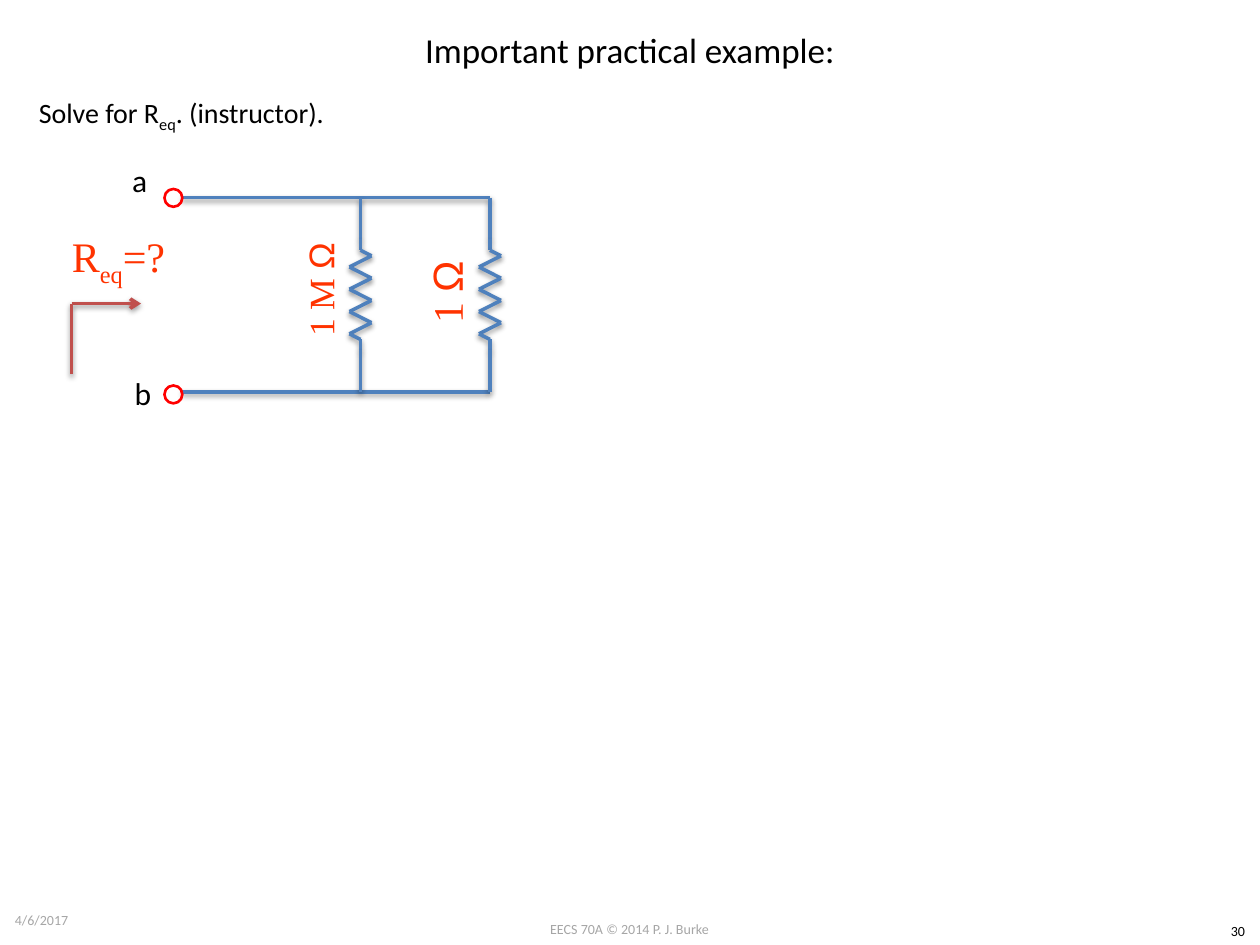
from itertools import pairwise

from lxml import etree
from pptx import Presentation
from pptx.dml.color import RGBColor
from pptx.enum import shapes, text
from pptx.oxml import ns
from pptx.util import Pt

BLACK = RGBColor(0x00, 0x00, 0x00)
GRAY = RGBColor(0xA6, 0xA6, 0xA6)
BLUE = RGBColor(0x4F, 0x81, 0xBD)
BRICK = RGBColor(0xC0, 0x50, 0x4D)
RED = RGBColor(0xFF, 0x00, 0x00)
ORANGE = RGBColor(0xFF, 0x33, 0x00)

SANS, SERIF, SYMBOL = "Calibri", "Times New Roman", "Arial"
LEFT, CENTER = text.PP_ALIGN.LEFT, text.PP_ALIGN.CENTER
TOP, MIDDLE = text.MSO_ANCHOR.TOP, text.MSO_ANCHOR.MIDDLE

TOP_WIRE, BOTTOM_WIRE = 113, 224
TERMINAL_X, RESISTOR_XS = 103.7, (206, 280)


def add_run(p, words, size, color, font=SANS, subscript=False):
    r = p.add_run()
    r.text = words
    r.font.size = Pt(size)
    r.font.name = font
    r.font.color.rgb = color
    if subscript:
        r.font._element.set("baseline", "-25000")


def add_label(slide, box, runs, align=LEFT, anchor=TOP, rotation=0, wrap=True):
    sp = slide.shapes.add_textbox(*map(Pt, box))
    sp.rotation = rotation
    tf = sp.text_frame
    tf.word_wrap = wrap
    tf.vertical_anchor = anchor
    p = tf.paragraphs[0]
    p.alignment = align
    for run in runs:
        add_run(p, *run)


def add_shadow(line):
    effects = etree.SubElement(line._element.spPr, ns.qn("a:effectLst"))
    shadow = etree.SubElement(
        effects, ns.qn("a:outerShdw"), blurRad=str(Pt(3.1)),
        dist=str(Pt(1.6)), dir="5400000", rotWithShape="0")
    color = etree.SubElement(shadow, ns.qn("a:srgbClr"), val=str(BLACK))
    etree.SubElement(color, ns.qn("a:alpha"), val="38000")


def add_line(parent, start, end, color=BLUE, arrow=False):
    line = parent.shapes.add_connector(
        shapes.MSO_CONNECTOR.STRAIGHT, *map(Pt, (*start, *end)))
    line.line.color.rgb = color
    line.line.width = Pt(2)
    if arrow:
        etree.SubElement(line.line._get_or_add_ln(), ns.qn("a:tailEnd"), type="arrow")
    add_shadow(line)


def add_resistor(slide, x):
    first, step, swing, teeth = 146.2, 6.37, 6.3, 8
    zigzag = [(x + swing * (-1) ** i, first + step * i) for i in range(teeth)]
    last = first + step * (teeth - 1)
    head = [(x, y) for y in (TOP_WIRE, 136.8, first - step / 2)]
    foot = [(x, y) for y in (last + step / 2, 200.2, BOTTOM_WIRE)]
    group = slide.shapes.add_group_shape()
    for start, end in pairwise(head + zigzag + foot):
        add_line(group, start, end)


def add_terminal(slide, y):
    sp = slide.shapes.add_shape(
        shapes.MSO_SHAPE.OVAL, *map(Pt, (94, y, 10.2, 10.2)))
    sp.shadow.inherit = False
    sp.fill.background()
    sp.line.color.rgb = RED
    sp.line.width = Pt(1.5)


def add_probe_arrow(slide):
    corner = (41, 173.5)
    group = slide.shapes.add_group_shape()
    add_line(group, corner, (80.6, 173.5), BRICK, arrow=True)
    add_line(group, (41, 213.8), corner, BRICK)


def add_title(slide, words):
    sp = slide.shapes.title
    sp.left, sp.top, sp.width, sp.height = map(Pt, (36, 0, 648, 56))
    tf = sp.text_frame
    tf.vertical_anchor = MIDDLE
    p = tf.paragraphs[0]
    p.alignment = CENTER
    add_run(p, words, 20, BLACK)


def main():
    prs = Presentation()
    prs.slide_width, prs.slide_height = Pt(720), Pt(540)
    s = prs.slides.add_slide(prs.slide_layouts[5])

    add_title(s, "Important practical example:")
    add_label(s, (15.1, 51.1, 180.7, 26.6),
              [("Solve for R", 16, BLACK), ("eq", 16, BLACK, SANS, True),
               (". (instructor).", 16, BLACK)], wrap=False)

    for y in (TOP_WIRE, BOTTOM_WIRE):
        add_line(s, (RESISTOR_XS[-1], y), (TERMINAL_X, y))
    for x in RESISTOR_XS:
        add_resistor(s, x)
    add_probe_arrow(s)
    for y in (108, 220.3):
        add_terminal(s, y)

    for name, x, y in (("a", 68.4, 88.6), ("b", 69.8, 210.2)):
        add_label(s, (x, y, 24, 28.8), [(name, 18, BLACK)], wrap=False)
    for value, size, x, y in (("1 M ", 20.4, 146.9, 146.9), ("1 ", 24, 218.9, 148.3)):
        add_label(s, (x, y, 72, 37.4),
                  [(value, size, ORANGE, SERIF), ("Ω", size, ORANGE, SYMBOL)],
                  CENTER, MIDDLE, rotation=270)
    add_label(s, (31.7, 129.6, 72, 37.4),
              [("R", 24, ORANGE, SERIF), ("eq", 24, ORANGE, SERIF, True),
               ("=?", 24, ORANGE, SERIF)], CENTER, MIDDLE)

    add_label(s, (1.4, 511.2, 168, 28.8), [("4/6/2017", 8, GRAY)], anchor=MIDDLE)
    add_label(s, (275.8, 522.7, 168, 17), [("EECS 70A © 2014 P. J. Burke", 8, GRAY)], CENTER)
    add_label(s, (694.8, 523.4, 25.2, 17), [("30", 8, BLACK)], CENTER)

    prs.save("out.pptx")


if __name__ == "__main__":
    main()
